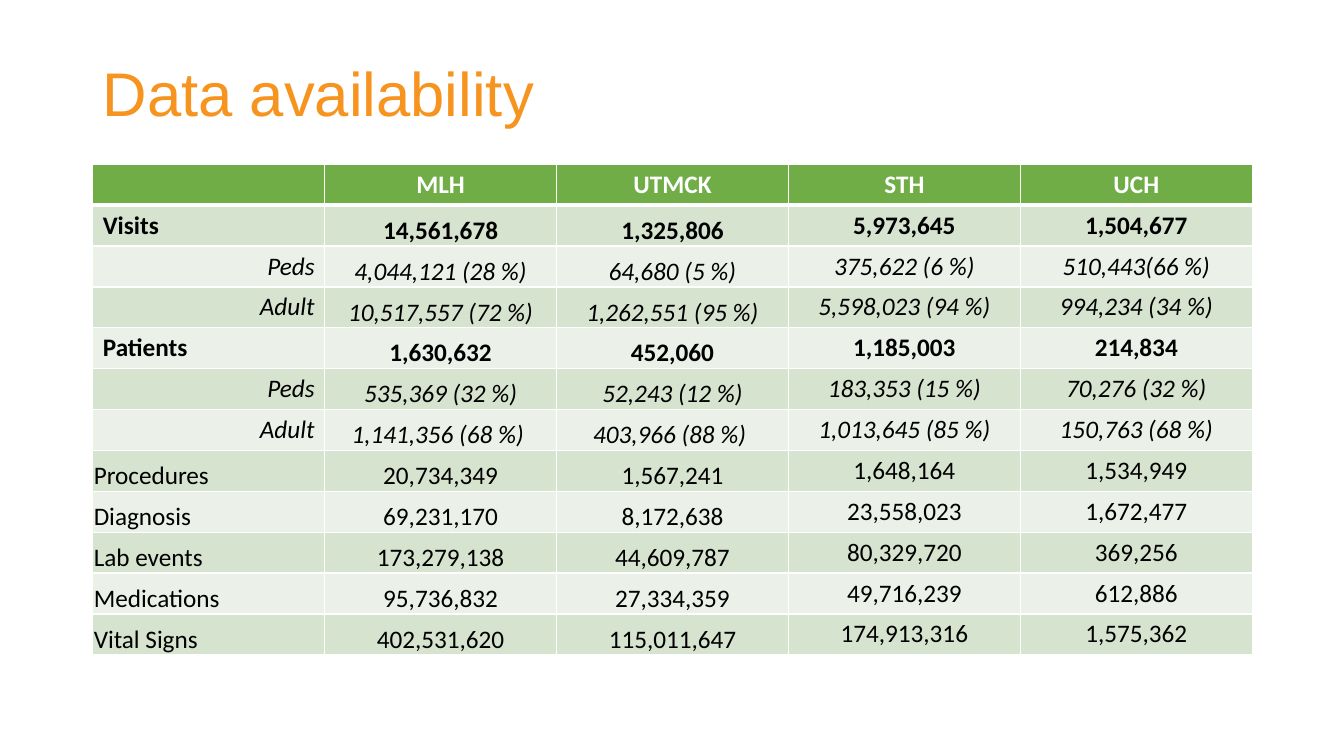
from lxml.etree import SubElement
from pptx import Presentation
from pptx.dml.color import RGBColor
from pptx.enum.text import MSO_ANCHOR, PP_ALIGN
from pptx.oxml import parse_xml
from pptx.oxml.ns import nsdecls
from pptx.util import Inches, Pt

COLORS = {"title": "F6941F", "header": "70AD47", "dark": "D5E3CF",
          "light": "EBF1E9", "white": "FFFFFF", "black": "000000"}
ROWS = [
    ("", "MLH", "UTMCK", "STH", "UCH"),
    ("Visits", "14,561,678", "1,325,806", "5,973,645", "1,504,677"),
    ("Peds", "4,044,121 (28 %)", "64,680 (5 %)", "375,622 (6 %)", "510,443(66 %)"),
    ("Adult", "10,517,557 (72 %)", "1,262,551 (95 %)", "5,598,023 (94 %)", "994,234 (34 %)"),
    ("Patients", "1,630,632", "452,060", "1,185,003", "214,834"),
    ("Peds", "535,369 (32 %)", "52,243 (12 %)", "183,353 (15 %)", "70,276 (32 %)"),
    ("Adult", "1,141,356 (68 %) ", "403,966 (88 %) ", "1,013,645 (85 %)", "150,763 (68 %)"),
    ("Procedures", "20,734,349", "1,567,241", "1,648,164", "1,534,949"),
    ("Diagnosis", "69,231,170", "8,172,638", "23,558,023", "1,672,477"),
    ("Lab events", "173,279,138", "44,609,787", "80,329,720", "369,256"),
    ("Medications", "95,736,832", "27,334,359", "49,716,239", "612,886"),
    ("Vital Signs", "402,531,620", "115,011,647", "174,913,316", "1,575,362"),
]
TOTALS = ("Visits", "Patients")
AGE_GROUPS = ("Peds", "Adult")
TIGHT = {"vertical_anchor": MSO_ANCHOR.BOTTOM, "margin_left": Inches(0.01),
         "margin_right": Inches(0.01), "margin_top": Inches(0.01), "margin_bottom": 0}


def set_attrs(obj, attrs):
    """Set every attribute of a format dict on an object."""
    for name, value in attrs.items():
        setattr(obj, name, value)


def write(p, text, color, **font):
    """Add one formatted run to a paragraph."""
    r = p.add_run()
    r.text = text
    set_attrs(r.font, font)
    r.font.color.rgb = RGBColor.from_string(COLORS[color])


def add_title(s, text):
    """Add the slide title."""
    tf = s.shapes.add_textbox(Inches(0.92), Inches(0.5), Inches(11.5), Inches(0.92)).text_frame
    set_attrs(tf, {"word_wrap": True, "vertical_anchor": MSO_ANCHOR.MIDDLE})
    p = tf.paragraphs[0]
    p.line_spacing = 0.9
    write(p, text, "title", size=Pt(44), name="Arial")


def set_borders(cell, **widths):
    """Draw white borders ahead of the fill of a cell."""
    tcPr = cell._tc.get_or_add_tcPr()
    for i, side in enumerate("LRTB"):
        ln = parse_xml(f'<a:ln{side} {nsdecls("a")} w="{Pt(widths.get(side, 1))}"/>')
        fill = SubElement(ln, ln.tag.replace(f"ln{side}", "solidFill"))
        SubElement(fill, ln.tag.replace(f"ln{side}", "srgbClr"), val=COLORS["white"])
        tcPr.insert(i, ln)


def fill_cell(cell, text, row, col):
    """Write and style one table cell by its row and column."""
    label = ROWS[row][0]
    header = row == 0
    measure = not header and label not in TOTALS + AGE_GROUPS
    fill = "header" if header else "dark" if row % 2 else "light"
    cell.fill.solid()
    cell.fill.fore_color.rgb = RGBColor.from_string(COLORS[fill])
    set_borders(cell, **{0: {"B": 3}, 1: {"T": 3}}.get(row, {}))
    if not header and (col in (1, 2) or col == 0 and measure):
        set_attrs(cell, TIGHT)
    p = cell.text_frame.paragraphs[0]
    if col:
        p.alignment = PP_ALIGN.CENTER
    else:
        p.alignment = PP_ALIGN.RIGHT if label in AGE_GROUPS else PP_ALIGN.LEFT
    if text:
        write(p, text, "white" if header else "black", size=Pt(18), name="Calibri",
              bold=header or label in TOTALS, italic=label in AGE_GROUPS)


def add_data_table(s):
    """Add the table of record counts per site."""
    table = s.shapes.add_table(len(ROWS), len(ROWS[0]), Inches(0.92), Inches(1.63),
                               Inches(11.5), Inches(4.87)).table
    for i, row in enumerate(ROWS):
        for j, text in enumerate(row):
            fill_cell(table.cell(i, j), text, i, j)


def main():
    """Build and save the slide."""
    prs = Presentation()
    set_attrs(prs, {"slide_width": Inches(13.33), "slide_height": Inches(7.5)})
    s = prs.slides.add_slide(prs.slide_layouts[6])
    add_title(s, "Data availability")
    add_data_table(s)
    prs.save("out.pptx")


if __name__ == "__main__":
    main()
